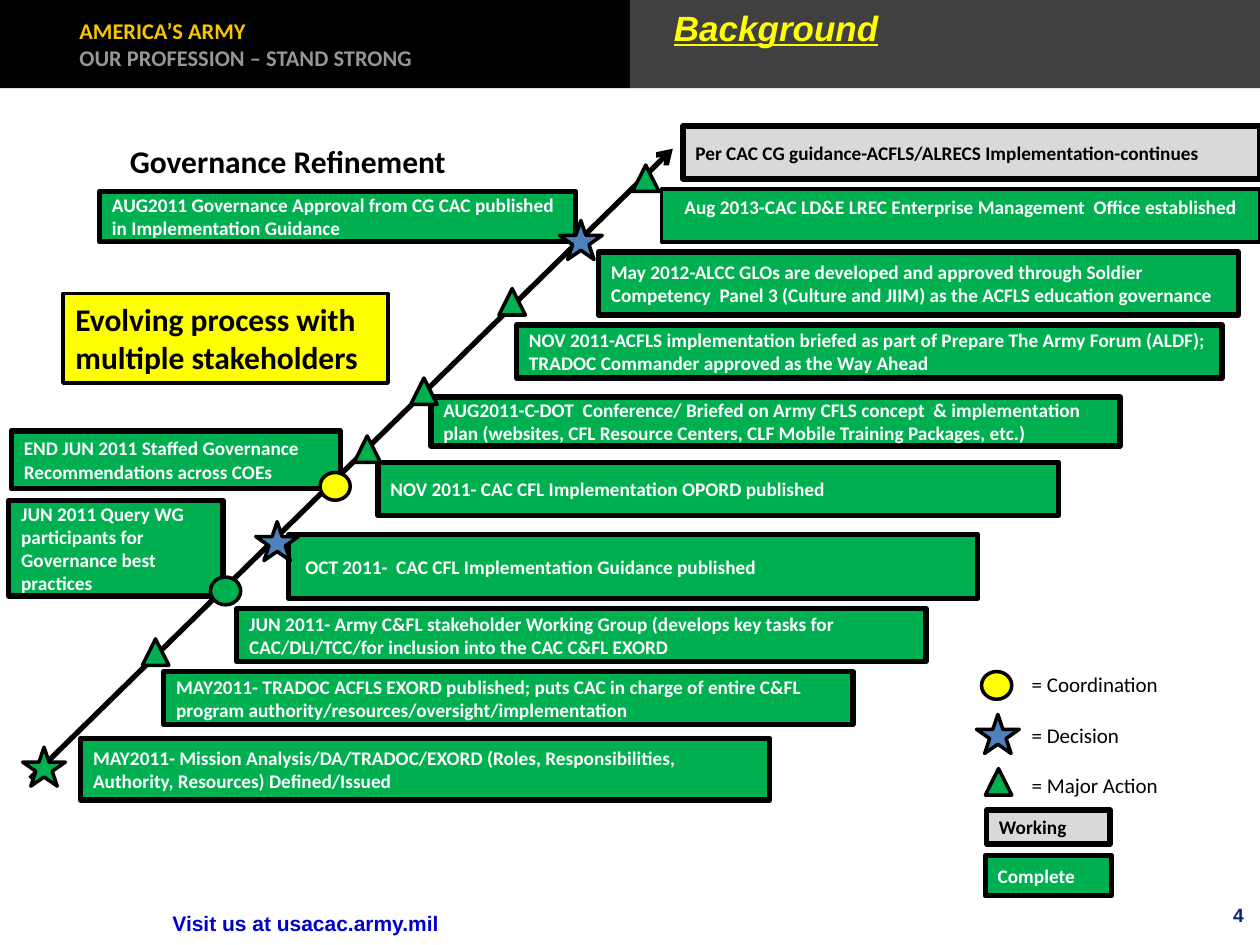
from dataclasses import dataclass, field

from lxml import etree
from pptx import Presentation
from pptx.dml.color import RGBColor
from pptx.enum import shapes, text
from pptx.oxml.ns import qn
from pptx.util import Inches, Pt

COLS, ROWS = 100, 75
GREEN, BLUE, YELLOW, GREY = "00B050", "4F81BD", "FFFF00", "D9D9D9"
BLACK, WHITE = "000000", "FFFFFF"
KIND = shapes.MSO_SHAPE
MIDDLE, TOP = text.MSO_ANCHOR.MIDDLE, text.MSO_ANCHOR.TOP
LEFT, CENTER, RIGHT = text.PP_ALIGN.LEFT, text.PP_ALIGN.CENTER, text.PP_ALIGN.RIGHT
MARK_SIZE = {
    KIND.ISOSCELES_TRIANGLE: (2.1, 2.1),
    KIND.STAR_5_POINT: (3.4, 3.1),
    KIND.OVAL: (2.4, 2.2),
}


@dataclass
class Block:
    """A box of text placed in grid columns and rows."""
    col: float
    row: float
    cols: float
    rows: float
    lines: tuple = ()
    fill: str | None = GREEN
    edge: float = 3
    ink: str = WHITE
    inks: tuple = ()
    size: float = 11
    face: str = "Calibri"
    bold: bool = True
    anchor: int = MIDDLE
    align: int = LEFT
    wrap: bool = True
    gap: float = 0
    inset: float = 0.1
    extra: dict = field(default_factory=dict)


@dataclass
class Mark:
    """A symbol placed in grid columns and rows."""
    kind: int
    col: float
    row: float
    fill: str = GREEN


HEADER = [
    Block(0, 0, 50, 7, ("AMERICA’S ARMY", "OUR PROFESSION – STAND STRONG"), BLACK, 0,
          inks=("F6C700", "969696"), size=12.8, inset=0.63),
    Block(50, 0, 50, 7, fill="404040", edge=0),
    Block(52.5, 0, 30.8, 4.4, ("Background",), None, 0, YELLOW, size=20, face="Arial",
          anchor=TOP, extra={"italic": True, "underline": True}),
]
CARDS = [
    Block(54.2, 10, 45.8, 4.2, ("Per CAC CG guidance-ACFLS/ALRECS Implementation-continues",),
          GREY, ink=BLACK),
    Block(52.5, 15, 47.5, 4.2,
          ("Aug 2013-CAC LD&E LREC Enterprise Management  Office established",),
          edge=2, anchor=TOP, align=CENTER),
    Block(47.5, 20, 50.8, 5,
          ("May 2012-ALCC GLOs are developed and approved through Soldier Competency  "
           "Panel 3 (Culture and JIIM) as the ACFLS education governance",)),
    Block(41, 25.8, 56, 4.2,
          ("NOV 2011-ACFLS implementation briefed as part of Prepare The Army Forum (ALDF);",
           "TRADOC Commander approved as the Way Ahead")),
    Block(34.2, 31.5, 54.7, 3.9,
          ("AUG2011-C-DOT  Conference/ Briefed on Army CFLS concept  & implementation plan "
           "(websites, CFL Resource Centers, CLF Mobile Training Packages, etc.)",)),
    Block(30, 36.7, 54, 4.2, ("NOV 2011- CAC CFL Implementation OPORD published",)),
    Block(22.9, 42.4, 54.7, 5.1, (" OCT 2011-  CAC CFL Implementation Guidance published",)),
    Block(18.8, 48.3, 54.7, 4.2,
          ("JUN 2011- Army C&FL stakeholder Working Group (develops key tasks for "
           "CAC/DLI/TCC/for inclusion into the CAC C&FL EXORD",)),
    Block(13, 53.3, 54.7, 4.2,
          ("MAY2011- TRADOC ACFLS EXORD published; puts CAC in charge of entire C&FL "
           "program authority/resources/oversight/implementation",)),
    Block(6.4, 58.6, 54.7, 4.9,
          ("MAY2011- Mission Analysis/DA/TRADOC/EXORD (Roles, Responsibilities, "
           "Authority, Resources) Defined/Issued",)),
    Block(7.9, 15.2, 37.8, 4,
          ("AUG2011 Governance Approval from CG CAC published in Implementation Guidance",)),
    Block(0.9, 34.2, 26.1, 4.6,
          ("END JUN 2011 Staffed Governance Recommendations across COEs",)),
    Block(0.7, 39.7, 17, 7.6,
          ("JUN 2011 Query WG participants for Governance best practices",)),
]
NOTES = [
    Block(3, 9.1, 39.7, 7.4, ("Governance Refinement",), None, 0, BLACK, size=18, align=CENTER),
    Block(5, 23.3, 25.8, 7.1, ("Evolving process with multiple stakeholders",), YELLOW, 2,
          BLACK, size=18, anchor=TOP),
    Block(80.9, 52.8, 13, 11.1, ("= Coordination", "= Decision", "= Major Action"), None, 0,
          BLACK, size=12, bold=False, anchor=TOP, wrap=False, gap=14.6),
    Block(78.3, 64.3, 9.8, 2.7, ("Working",), GREY, ink=BLACK),
    Block(78.2, 67.9, 10, 3.2, ("Complete",)),
    Block(12.7, 71.8, 40.9, 3, ("Visit us at usacac.army.mil",), None, 0, "0000CC",
          size=12, face="Arial", anchor=TOP),
    Block(93.9, 71.2, 5.8, 3.3, ("4",), None, 0, "062478", face="Arial",
          anchor=TOP, align=RIGHT),
]
MARKS = [
    Mark(KIND.STAR_5_POINT, 1.8, 59.3),
    Mark(KIND.ISOSCELES_TRIANGLE, 11.3, 50.7),
    Mark(KIND.OVAL, 16.7, 45.8),
    Mark(KIND.STAR_5_POINT, 20.3, 41.4, BLUE),
    Mark(KIND.OVAL, 25.4, 37.5, YELLOW),
    Mark(KIND.ISOSCELES_TRIANGLE, 28.1, 34.6),
    Mark(KIND.ISOSCELES_TRIANGLE, 32.6, 30),
    Mark(KIND.ISOSCELES_TRIANGLE, 39.6, 22.9),
    Mark(KIND.STAR_5_POINT, 44.4, 17.5, BLUE),
    Mark(KIND.ISOSCELES_TRIANGLE, 50.2, 13.1),
    Mark(KIND.OVAL, 77.9, 53.3, YELLOW),
    Mark(KIND.STAR_5_POINT, 77.5, 56.7, BLUE),
    Mark(KIND.ISOSCELES_TRIANGLE, 78.2, 61),
]

prs = Presentation()
prs.slide_width, prs.slide_height = Inches(10), Inches(7.5)
s = prs.slides.add_slide(prs.slide_layouts[6])


def rgb(value: str) -> RGBColor:
    """Turn a hex string into a colour."""
    return RGBColor.from_string(value)


def grid(*cells: float) -> list[int]:
    """Turn alternating columns and rows into lengths."""
    units = prs.slide_width / COLS, prs.slide_height / ROWS
    return [round(cell * units[i % 2]) for i, cell in enumerate(cells)]


def paint(sp, fill: str, edge: float) -> None:
    """Fill a shape and draw its black edge."""
    sp.shadow.inherit = False
    sp.fill.solid()
    sp.fill.fore_color.rgb = rgb(fill)
    if edge:
        sp.line.color.rgb = rgb(BLACK)
        sp.line.width = Pt(edge)
    else:
        sp.line.fill.background()


def draw_block(b: Block) -> None:
    """Draw a box and write its paragraphs."""
    at = grid(b.col, b.row, b.cols, b.rows)
    if b.fill:
        sp = s.shapes.add_shape(KIND.RECTANGLE, *at)
        paint(sp, b.fill, b.edge)
    else:
        sp = s.shapes.add_textbox(*at)
    tf = sp.text_frame
    frame = {"word_wrap": b.wrap, "vertical_anchor": b.anchor, "margin_left": Inches(b.inset)}
    for name, value in frame.items():
        setattr(tf, name, value)
    for i, line in enumerate(b.lines):
        p = tf.add_paragraph() if i else tf.paragraphs[0]
        p.alignment = b.align
        if i and b.gap:
            p.space_before = Pt(b.gap)
        r = p.add_run()
        r.text = line
        style = {"name": b.face, "size": Pt(b.size), "bold": b.bold} | b.extra
        for name, value in style.items():
            setattr(r.font, name, value)
        r.font.color.rgb = rgb(b.inks[i] if b.inks else b.ink)


def draw_mark(m: Mark) -> None:
    """Draw one symbol."""
    paint(s.shapes.add_shape(m.kind, *grid(m.col, m.row, *MARK_SIZE[m.kind])), m.fill, 2)


def draw_timeline(*ends: float) -> None:
    """Draw the rising arrow."""
    line = s.shapes.add_connector(shapes.MSO_CONNECTOR.STRAIGHT, *grid(*ends))
    line.line.color.rgb = rgb(BLACK)
    line.line.width = Pt(3)
    etree.SubElement(line.line._get_or_add_ln(), qn("a:tailEnd"), type="arrow")
    etree.SubElement(line._element.spPr, qn("a:effectLst"))


draw_timeline(2.4, 61.8, 53.4, 11.8)
for block in HEADER + CARDS + NOTES:
    draw_block(block)
for mark in MARKS:
    draw_mark(mark)
prs.save("out.pptx")
